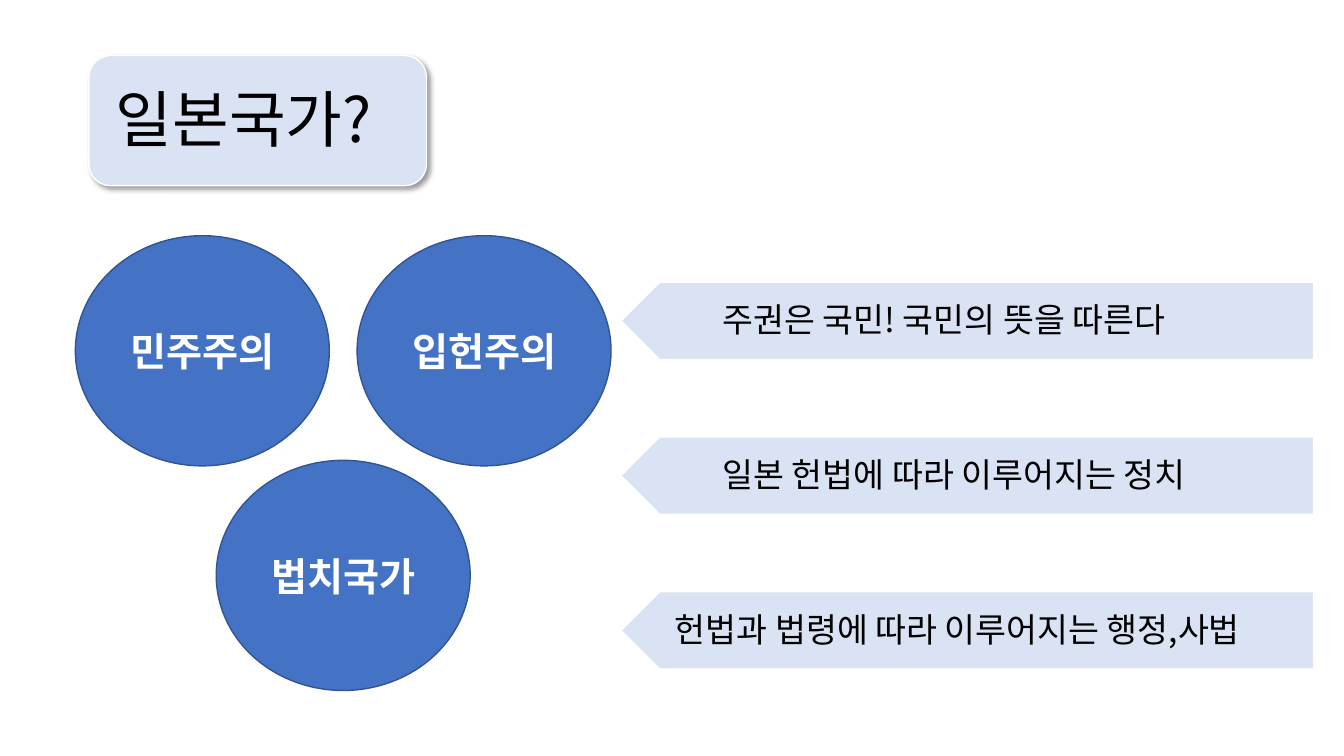
"""Build a slide on the three principles of the Japanese state."""
import pptx
import pptx.util
import pptx.dml.color
import pptx.enum.shapes
import pptx.enum.text
import pptx.oxml
import pptx.oxml.ns
from dataclasses import dataclass
from lxml import etree

Cm = pptx.util.Cm
Pt = pptx.util.Pt
Kind = pptx.enum.shapes.MSO_SHAPE
Align = pptx.enum.text.PP_ALIGN
Anchor = pptx.enum.text.MSO_ANCHOR
qn = pptx.oxml.ns.qn


@dataclass
class Theme:
    face: str = "Noto Sans CJK KR"
    pale: str = "DAE3F3"
    blue: str = "4472C4"
    edge: str = "325491"
    white: str = "FFFFFF"
    black: str = "000000"
    title: int = 44
    label: int = 28
    body: int = 24


theme = Theme()


def draw(kind, box, fill, line):
    shape = slide.shapes.add_shape(kind, *map(Cm, box))
    shape.shadow.inherit = False
    shape.fill.solid()
    shape.fill.fore_color.rgb = pptx.dml.color.RGBColor.from_string(fill)
    shape.line.color.rgb = pptx.dml.color.RGBColor.from_string(line)
    shape.line.width = Pt(1)
    return shape


def write(shape, text, size, color, bold=False):
    frame = shape.text_frame
    frame.word_wrap = True
    para = frame.paragraphs[0]
    para.text = text
    para.font.name = theme.face
    para.font.size = Pt(size)
    para.font.bold = bold
    para.font.color.rgb = pptx.dml.color.RGBColor.from_string(color)
    latin = next(para._p.iter(qn("a:latin")))
    east = etree.Element(qn("a:ea"), typeface=theme.face)
    latin.addnext(east)
    return para


deck = pptx.Presentation()
deck.slide_width = Cm(33.87)
deck.slide_height = Cm(19.05)
slide = deck.slides.add_slide(deck.slide_layouts[6])

plate = draw(Kind.FLOWCHART_ALTERNATE_PROCESS, (2.24, 1.4, 8.51, 3.28),
             theme.pale, theme.white)
glow = plate._element.spPr.find(qn("a:effectLst"))
shade = etree.SubElement(glow, qn("a:outerShdw"), blurRad=str(Pt(4)),
                         dist=str(Pt(3)), dir="2700000", algn="tl", rotWithShape="0")
tone = etree.SubElement(shade, qn("a:srgbClr"), val=theme.black)
etree.SubElement(tone, qn("a:alpha"), val="40000")

title = slide.shapes.add_textbox(Cm(2.67), Cm(1.4), Cm(7.7), Cm(3.4))
title.text_frame.vertical_anchor = Anchor.MIDDLE
write(title, "일본국가?", theme.title, theme.black).line_spacing = 0.9

for left, top, text in [(9, 5.94, "입헌주의"), (1.9, 5.94, "민주주의"),
                        (5.45, 11.6, "법치국가")]:
    disc = draw(Kind.OVAL, (left, top, 6.4, 5.8), theme.blue, theme.edge)
    disc.text_frame.vertical_anchor = Anchor.MIDDLE
    write(disc, text, theme.label, theme.white, True).alignment = Align.CENTER

notes = [(17.96, 14.22, "주권은 국민! 국민의 뜻을 따른다"),
         (17.96, 14.22, "일본 헌법에 따라 이루어지는 정치"),
         (16.76, 16.33, "헌법과 법령에 따라 이루어지는 행정,사법")]
for row, (left, width, text) in enumerate(notes):
    top = 7.11 + 3.9 * row
    arrow = draw(Kind.PENTAGON, (15.65, top, 17.45, 1.95), theme.pale, theme.white)
    arrow.rotation = 180
    note = slide.shapes.add_textbox(Cm(left), Cm(top + 0.5), Cm(width), Cm(1.17))
    para = write(note, text, theme.body, theme.black)
    para.line_spacing = 0.8
    para.space_before = Pt(10)

deck.save("out.pptx")
